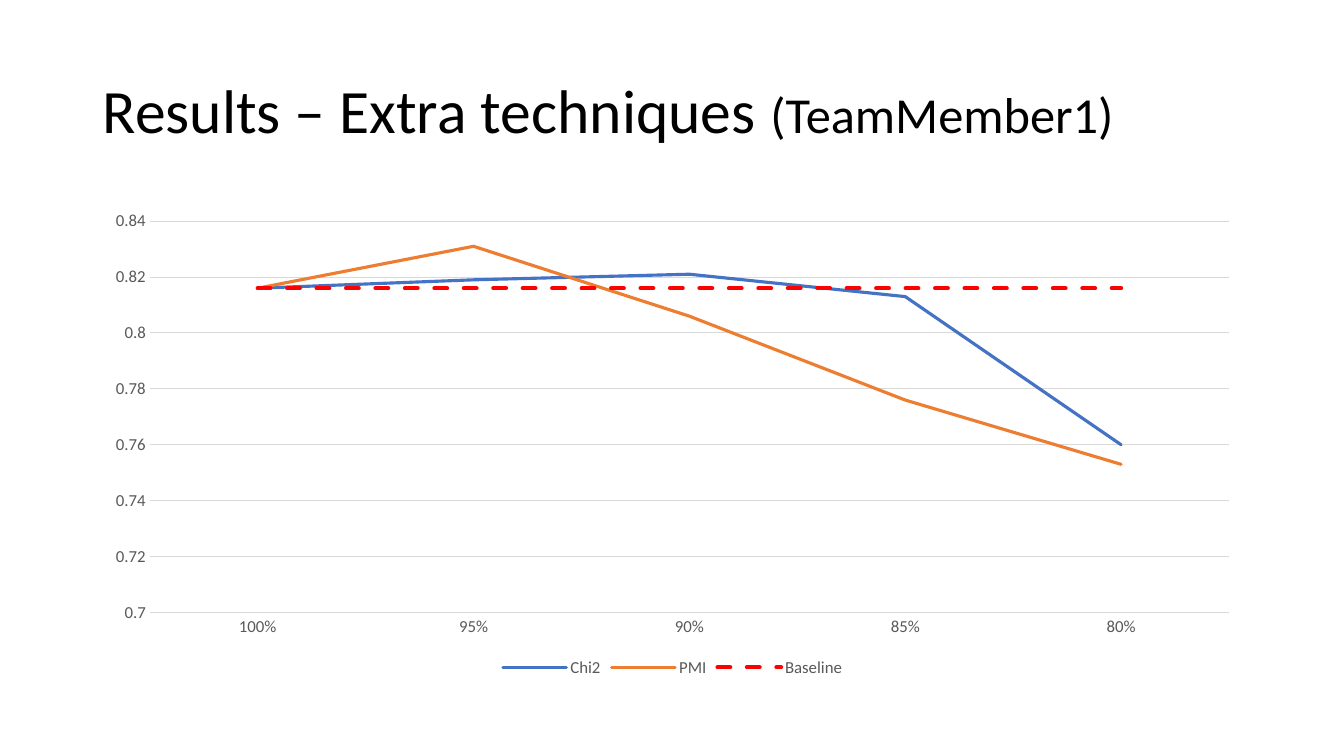
from pptx import Presentation
from pptx.chart.data import CategoryChartData
from pptx.dml.color import RGBColor
from pptx.enum.chart import XL_CHART_TYPE as ChartType
from pptx.enum.chart import XL_LEGEND_POSITION as LegendPosition
from pptx.enum.chart import XL_MARKER_STYLE as MarkerStyle
from pptx.enum.chart import XL_TICK_MARK as TickMark
from pptx.enum.dml import MSO_LINE_DASH_STYLE as DashStyle
from pptx.enum.text import MSO_ANCHOR as Anchor
from pptx.util import Inches, Pt

BLACK = RGBColor(0x00, 0x00, 0x00)
GRAY = RGBColor(0x59, 0x59, 0x59)
LIGHT_GRAY = RGBColor(0xD9, 0xD9, 0xD9)
BLUE = RGBColor(0x44, 0x72, 0xC4)
ORANGE = RGBColor(0xED, 0x7D, 0x31)
RED = RGBColor(0xFF, 0x00, 0x00)
FONT = "Calibri"

TITLE_BOX = (0.92, 0.4, 11.5, 1.45)
CHART_BOX = (0.92, 2, 11.5, 4.76)
TITLE_SPANS = [("Results – Extra techniques ", 44), ("(TeamMember1)", 36)]
KEPT_FEATURES = [1.0, 0.95, 0.9, 0.85, 0.8]
SERIES = [
    ("Chi2", [0.816, 0.819, 0.821, 0.813, 0.76], BLUE, 2.25, None),
    ("PMI", [0.816, 0.831, 0.806, 0.776, 0.753], ORANGE, 2.25, None),
    ("Baseline", [0.816] * 5, RED, 3, DashStyle.DASH),
]


def style_font(font, size, color):
    font.name = FONT
    font.size = Pt(size)
    font.color.rgb = color


def style_line(line, color, width):
    line.color.rgb = color
    line.width = Pt(width)


def add_title(page, box):
    frame = page.shapes.add_textbox(*map(Inches, box)).text_frame
    frame.word_wrap = True
    frame.vertical_anchor = Anchor.MIDDLE
    para = frame.paragraphs[0]
    para.line_spacing = 0.9
    for text, size in TITLE_SPANS:
        span = para.add_run()
        span.text = text
        style_font(span.font, size, BLACK)


def style_axes(chart):
    for axis in (chart.category_axis, chart.value_axis):
        axis.major_tick_mark = TickMark.NONE
        axis.minor_tick_mark = TickMark.NONE
        style_font(axis.tick_labels.font, 12, GRAY)
    chart.category_axis.tick_labels.number_format = "0%"
    chart.category_axis.tick_labels.number_format_is_linked = False
    style_line(chart.category_axis.format.line, LIGHT_GRAY, 0.75)

    values = chart.value_axis
    values.minimum_scale = 0.7
    values.maximum_scale = 0.84
    values.major_unit = 0.02
    values.tick_labels.number_format = "General"
    values.tick_labels.number_format_is_linked = False
    values.format.line.fill.background()
    values.has_major_gridlines = True
    style_line(values.major_gridlines.format.line, LIGHT_GRAY, 0.75)


def add_results_chart(page, box):
    data = CategoryChartData()
    data.categories = KEPT_FEATURES
    data.categories.number_format = "0%"
    for name, values, *_ in SERIES:
        data.add_series(name, values)
    chart = page.shapes.add_chart(ChartType.LINE, *map(Inches, box), data).chart
    style_font(chart.font, 10, BLACK)
    chart.has_title = False
    chart.has_legend = True
    chart.legend.position = LegendPosition.BOTTOM
    chart.legend.include_in_layout = False
    style_font(chart.legend.font, 12, GRAY)
    style_axes(chart)

    plot = chart.plots[0]
    plot.vary_by_categories = False
    for series, (_, _, color, width, dash) in zip(plot.series, SERIES):
        series.smooth = False
        series.marker.style = MarkerStyle.NONE
        style_line(series.format.line, color, width)
        if dash:
            series.format.line.dash_style = dash
        for outline in series._element.xpath("c:spPr/a:ln"):
            outline.set("cap", "rnd")


def main():
    deck = Presentation()
    deck.slide_width = Inches(13.33)
    deck.slide_height = Inches(7.5)
    page = deck.slides.add_slide(deck.slide_layouts[6])
    add_title(page, TITLE_BOX)
    add_results_chart(page, CHART_BOX)
    deck.save("out.pptx")


if __name__ == "__main__":
    main()
